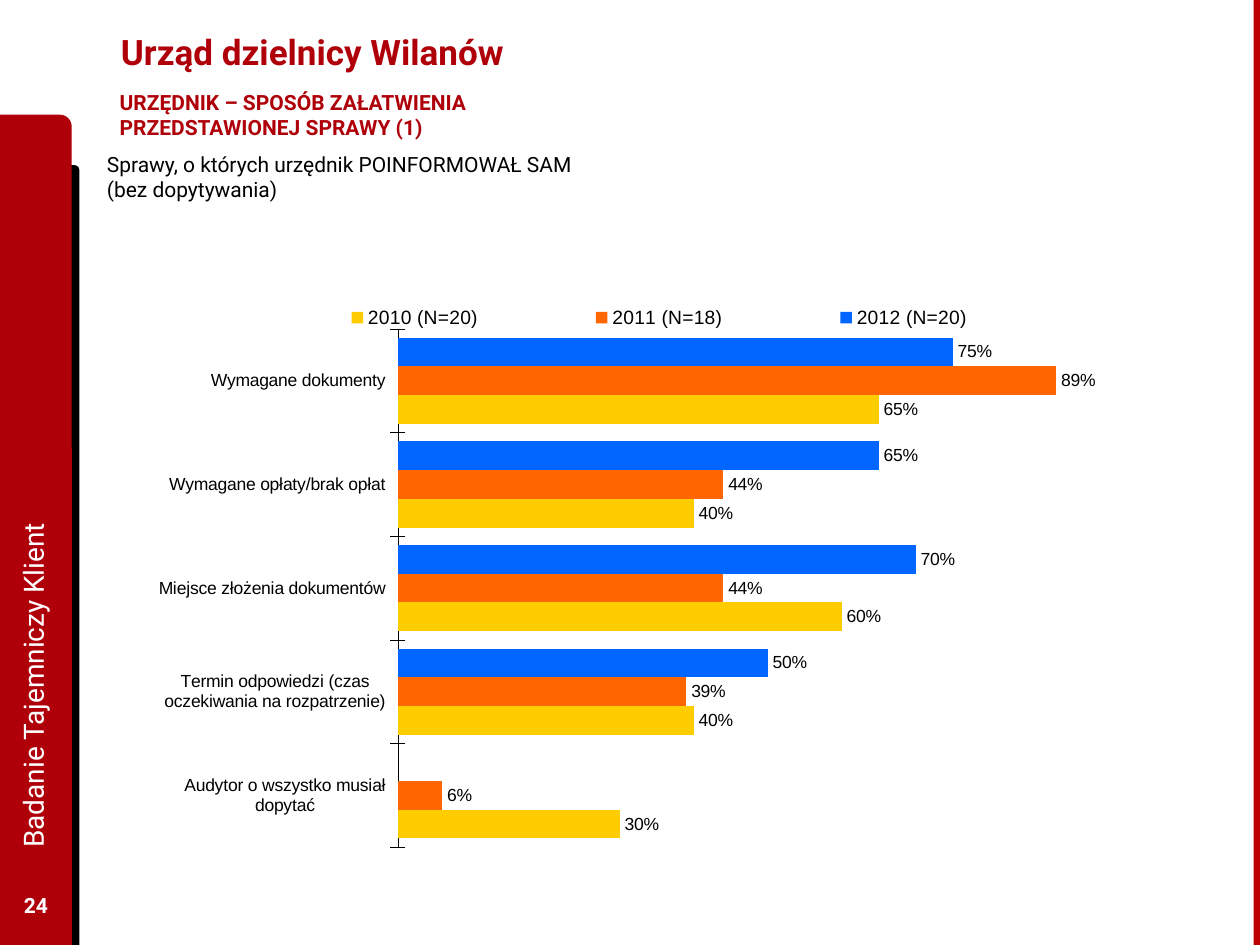
"""Build the Wilanów district office slide with its clustered bar chart."""
from dataclasses import dataclass

import pptx
import pptx.chart.data
import pptx.dml.color
import pptx.enum.chart
import pptx.enum.shapes
import pptx.enum.text
import pptx.oxml
import pptx.oxml.ns
import pptx.util

COLUMNS, ROWS = 100, 75
CATEGORIES = [
    "Wymagane dokumenty",
    "Wymagane opłaty/brak opłat",
    "Miejsce złożenia dokumentów",
    "Termin odpowiedzi (czas oczekiwania na rozpatrzenie)",
    "Audytor o wszystko musiał dopytać",
]
SURVEYS = [
    ("2012 (N=20)", "0066FF", (0.75, 0.65, 0.7, 0.5, None)),
    ("2011 (N=18)", "FF6600", (0.89, 0.44, 0.44, 0.39, 0.06)),
    ("2010 (N=20)", "FFCC00", (0.65, 0.4, 0.6, 0.4, 0.3)),
]


@dataclass(frozen=True)
class Theme:
    """Colours, fonts and type sizes of the slide."""
    red: str = "AF000A"
    edge: str = "BD0000"
    black: str = "000000"
    white: str = "FFFFFF"
    text_font: str = "Roboto"
    chart_font: str = "Arial"
    title: int = 20
    side: int = 16
    body: int = 12
    legend: int = 11
    label: int = 10


THEME = Theme()


def rgb(colour):
    """Turn a hex string into a colour."""
    return pptx.dml.color.RGBColor.from_string(colour)


def cells(left, top, width, height):
    """Convert grid columns and rows to slide lengths."""
    column = pptx.util.Inches(10) / COLUMNS
    row = pptx.util.Inches(7.5) / ROWS
    return [round(n) for n in (left * column, top * row, width * column, height * row)]


def style(font, size, colour, name=THEME.text_font, bold=False):
    """Apply size, colour, face and weight to a font."""
    font.size = pptx.util.Pt(size)
    font.color.rgb = rgb(colour)
    font.name = name
    font.bold = bold


def add_panel(slide, preset, place, colour):
    """Add a plain filled panel."""
    panel = slide.shapes.add_shape(preset, *cells(*place))
    panel.shadow.inherit = False
    panel.fill.solid()
    panel.fill.fore_color.rgb = rgb(colour)
    panel.line.fill.background()


def set_title(slide, wording, place):
    """Place and format the slide title."""
    title = slide.shapes.title
    title.left, title.top, title.width, title.height = cells(*place)
    frame = title.text_frame
    frame.text = wording
    frame.vertical_anchor = pptx.enum.text.MSO_ANCHOR.MIDDLE
    frame.paragraphs[0].alignment = pptx.enum.text.PP_ALIGN.LEFT
    style(frame.paragraphs[0].font, THEME.title, THEME.red, bold=True)


def add_text(slide, wording, place, size, colour, bold=False, wrap=True,
             middle=False, centred=False, turn=0, side_inset=0.1):
    """Add a one-paragraph text box."""
    box = slide.shapes.add_textbox(*cells(*place))
    box.rotation = turn
    frame = box.text_frame
    frame.word_wrap = wrap
    frame.margin_left = frame.margin_right = pptx.util.Inches(side_inset)
    anchors = pptx.enum.text.MSO_ANCHOR
    frame.vertical_anchor = anchors.MIDDLE if middle else anchors.TOP
    paragraph = frame.paragraphs[0]
    paragraph.text = wording
    aligns = pptx.enum.text.PP_ALIGN
    paragraph.alignment = aligns.CENTER if centred else aligns.LEFT
    style(paragraph.font, size, colour, bold=bold)


def manual_layout(x, y, w, h, inner=False):
    """Make a chart layout element from shares of the chart."""
    target = '<c:layoutTarget val="inner"/>' if inner else ""
    values = "".join(f'<c:{key} val="{share}"/>'
                     for key, share in zip("xywh", (x, y, w, h)))
    return pptx.oxml.parse_xml(
        f'<c:layout {pptx.oxml.ns.nsdecls("c")}><c:manualLayout>{target}'
        '<c:xMode val="edge"/><c:yMode val="edge"/>'
        f'{values}</c:manualLayout></c:layout>')


def format_axes(chart):
    """Show categories from the top down and hide the value scale."""
    categories, shares = chart.category_axis, chart.value_axis
    categories.reverse_order = True
    categories.major_tick_mark = pptx.enum.chart.XL_TICK_MARK.CROSS
    categories.format.line.color.rgb = rgb(THEME.black)
    categories.format.line.width = pptx.util.Pt(0.25)
    style(categories.tick_labels.font, THEME.label, THEME.black, THEME.chart_font)
    shares.minimum_scale, shares.maximum_scale, shares.major_unit = 0, 1, 0.2
    shares.has_major_gridlines = False
    shares.visible = False


def format_bars(plot):
    """Colour the surveys and label their bars."""
    plot.gap_width = 60
    plot.overlap = 0
    plot.vary_by_categories = False
    for series, (_, colour, _) in zip(plot.series, SURVEYS):
        series.format.fill.solid()
        series.format.fill.fore_color.rgb = rgb(colour)
        series.invert_if_negative = False
        labels = series.data_labels
        labels.show_value = True
        labels.number_format = "0%"
        labels.number_format_is_linked = False
        style(labels.font, THEME.label, THEME.black, THEME.chart_font)


def add_survey_chart(slide, place):
    """Add the clustered bar chart of the three surveys."""
    data = pptx.chart.data.CategoryChartData(number_format="0%")
    data.categories = CATEGORIES
    for name, _, values in SURVEYS:
        data.add_series(name, values)
    chart = slide.shapes.add_chart(
        pptx.enum.chart.XL_CHART_TYPE.BAR_CLUSTERED, *cells(*place), data).chart
    chart.has_title = False
    style(chart.font, THEME.label, THEME.black, THEME.chart_font)
    format_axes(chart)
    format_bars(chart.plots[0])
    chart.has_legend = True
    chart.legend.position = pptx.enum.chart.XL_LEGEND_POSITION.RIGHT
    chart.legend.include_in_layout = False
    style(chart.legend.font, THEME.legend, THEME.black, THEME.chart_font)
    for old in chart.element.xpath("c:chart/c:plotArea/c:layout | c:chart/c:legend/c:layout"):
        old.getparent().remove(old)
    plot_area = chart.element.xpath("c:chart/c:plotArea")[0]
    plot_area.insert(0, manual_layout(0.25, 0.08, 0.75, 0.91, inner=True))
    legend_side = chart.element.xpath("c:chart/c:legend/c:legendPos")[0]
    legend_side.addnext(manual_layout(0.09, 0.03, 0.85, 0.06))


def main():
    """Build and save the slide."""
    deck = pptx.Presentation()
    deck.slide_width, deck.slide_height = cells(0, 0, COLUMNS, ROWS)[2:]
    slide = deck.slides.add_slide(deck.slide_layouts.get_by_name("Title Only"))
    presets = pptx.enum.shapes.MSO_SHAPE
    add_panel(slide, presets.ROUND_1_RECTANGLE, (3.9, 13.1, 2.4, 61.9), THEME.black)
    add_panel(slide, presets.ROUND_1_RECTANGLE, (0, 9.1, 5.7, 65.9), THEME.red)
    add_panel(slide, presets.RECTANGLE, (99.5, 0, 0.5, ROWS), THEME.edge)
    set_title(slide, "Urząd dzielnicy Wilanów", (8.6, 0.5, 77.7, 7.2))
    add_text(slide, "Badanie Tajemniczy Klient", (-26.2, 36.9, 57.6, 5.1),
             THEME.side, THEME.white, middle=True, turn=270)
    add_text(slide, "24", (0, 69.8, 5.7, 4), THEME.body, THEME.white,
             bold=True, middle=True, centred=True)
    add_text(slide, "URZĘDNIK – SPOSÓB ZAŁATWIENIA PRZEDSTAWIONEJ SPRAWY (1)",
             (7.5, 6.6, 38.5, 3.3), THEME.body, THEME.red,
             bold=True, wrap=False, side_inset=0.2)
    add_text(slide, "Sprawy, o których urzędnik POINFORMOWAŁ SAM\n(bez dopytywania)",
             (7.5, 11.5, 44.1, 5), THEME.body, THEME.black)
    add_survey_chart(slide, (12, 22.5, 78.3, 45.2))
    deck.save("out.pptx")


if __name__ == "__main__":
    main()
